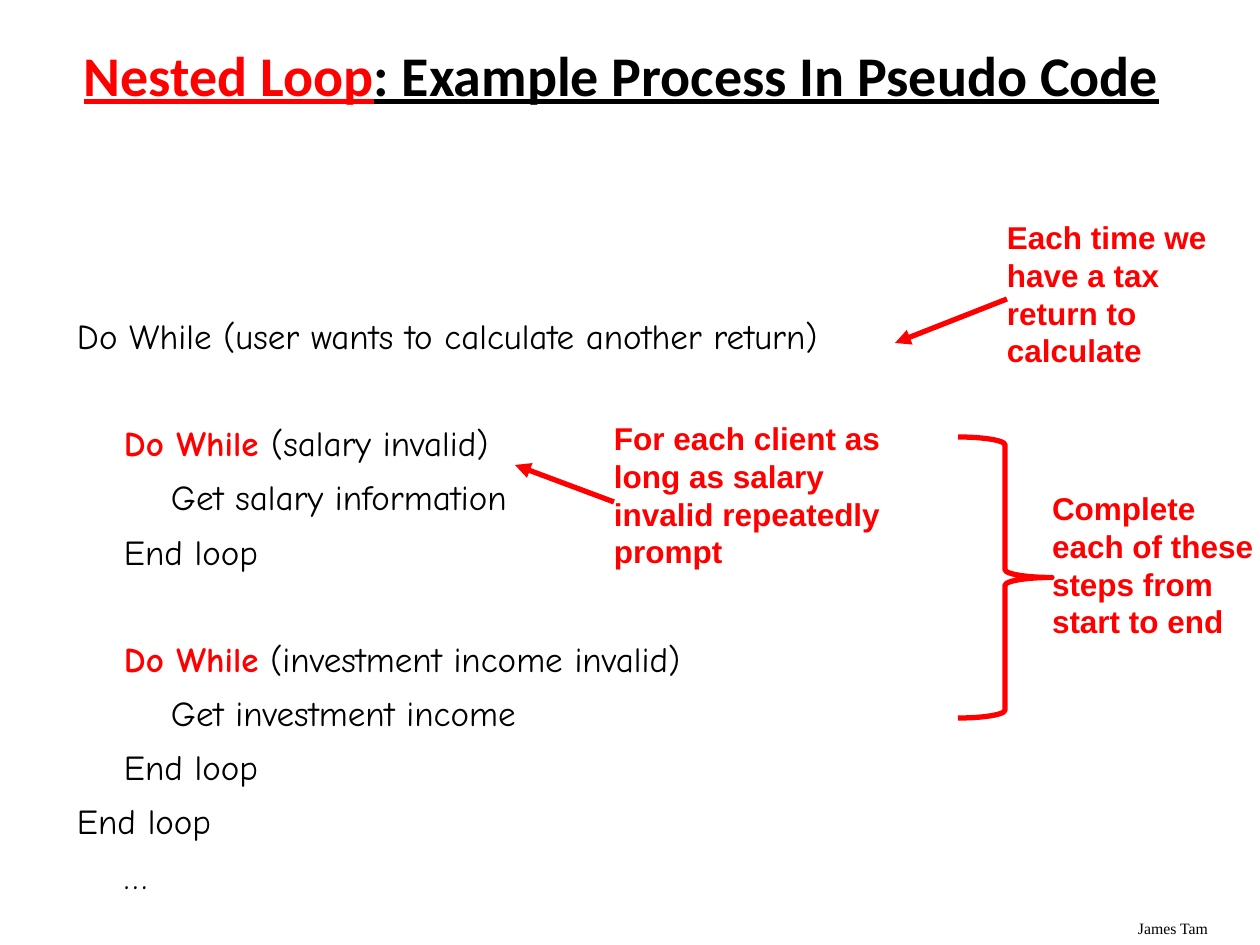
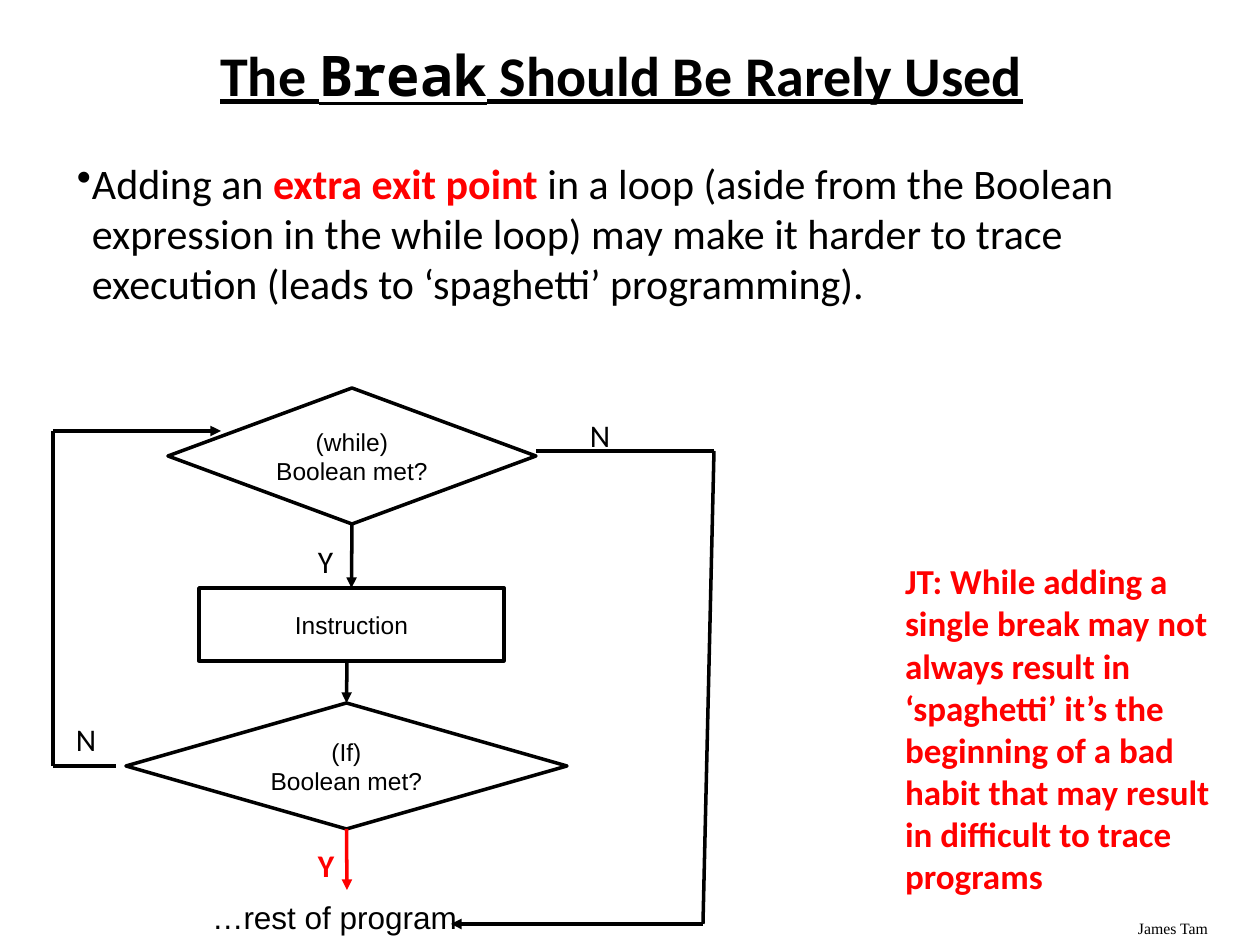
from itertools import pairwise

from pptx import Presentation
from pptx.dml.color import RGBColor
from pptx.enum.shapes import MSO_CONNECTOR as Connector, MSO_SHAPE as Shape
from pptx.enum.text import MSO_ANCHOR as Anchor, PP_ALIGN as Align
from pptx.oxml.ns import qn
from pptx.util import Pt

EMU_PER_PX = 914400 / 126
PAGE_WIDTH, PAGE_HEIGHT = 1260, 945
TITLE_ONLY = 5

BLACK = RGBColor(0x00, 0x00, 0x00)
RED = RGBColor(0xFF, 0x00, 0x00)

BODY_FONT, CODE_FONT, KEYWORD_FONT = "Calibri", "Comic Neue", "Noto Sans Mono"
LABEL_FONT, FOOTER_FONT = "Arial", "Times New Roman"

TOP, LEFT, BOTTOM = 0, 1, 2  # connection sites


def px(length):
    return round(length * EMU_PER_PX)


def write(para, spans, font, size, underline=None):
    """Fill a paragraph with spans of (text, colour, bold[, font])."""
    for text, color, bold, *own_font in spans:
        span = para.add_run()
        span.text = text
        span.font.name = own_font[0] if own_font else font
        span.font.size = Pt(size)
        span.font.color.rgb = color
        span.font.bold = bold
        span.font.underline = underline


def indent(para, margin, first=0):
    properties = para._p.get_or_add_pPr()
    properties.set("marL", str(px(margin)))
    properties.set("indent", str(px(first)))
    return properties


def set_insets(frame, left=13, right=13):
    frame.margin_left, frame.margin_right = px(left), px(right)
    frame.margin_top = frame.margin_bottom = px(6)


def add_text(page, left, top, width, height, spans, font, size, inset_left=13, inset_right=13):
    box = page.shapes.add_textbox(px(left), px(top), px(width), px(height))
    frame = box.text_frame
    frame.word_wrap = True
    set_insets(frame, inset_left, inset_right)
    write(frame.paragraphs[0], spans, font, size)
    return box


def add_line(page, start, end, color=BLACK, weight=2, arrow=False):
    line = page.shapes.add_connector(Connector.STRAIGHT, *map(px, (*start, *end)))
    line.line.color.rgb = color
    line.line.width = Pt(weight)
    properties = line.element.spPr
    if arrow:
        outline = properties.find(qn("a:ln"))
        outline.append(outline.makeelement(qn("a:tailEnd"), {"type": "triangle"}))
    properties.append(properties.makeelement(qn("a:effectLst"), {}))
    return line


def add_outline(page, kind, left, top, width, height, color=BLACK, weight=2):
    shape = page.shapes.add_shape(kind, px(left), px(top), px(width), px(height))
    shape.shadow.inherit = False
    shape.fill.background()
    shape.line.color.rgb = color
    shape.line.width = Pt(weight)
    return shape


def add_page(deck, title_spans):
    """Add a page with the shared title style and footer."""
    page = deck.slides.add_slide(deck.slide_layouts[TITLE_ONLY])
    title = page.shapes.title
    title.left, title.top, title.width, title.height = map(px, (59, 42, 1125, 72))
    frame = title.text_frame
    frame.vertical_anchor = Anchor.MIDDLE
    set_insets(frame)
    para = frame.paragraphs[0]
    para.alignment = Align.CENTER
    para.line_spacing = 0.9
    write(para, title_spans, BODY_FONT, 32, underline=True)
    add_text(page, 1125, 913, 126, 32, [("James Tam", BLACK, False)], FOOTER_FONT, 9)
    return page


# Nested loop page

def add_pseudo_code(page, left, top, width, height):
    # indent level, starts a new block, keyword, rest of the line
    lines = [
        (0, False, "", "Do While (user wants to calculate another return)"),
        (1, True, "Do While ", "(salary invalid)"),
        (2, False, "", "Get salary information"),
        (1, False, "", "End loop"),
        (1, True, "Do While", " (investment income invalid)"),
        (2, False, "", "Get investment income"),
        (1, False, "", "End loop"),
        (0, False, "", "End loop"),
        (1, False, "", "…"),
    ]
    box = add_text(page, left, top, width, height, [], CODE_FONT, 20)
    frame = box.text_frame
    for number, (level, new_block, keyword, rest) in enumerate(lines):
        para = frame.add_paragraph() if number else frame.paragraphs[0]
        indent(para, 47 * level)
        if number:
            para.space_before = Pt(37 if new_block else 7)
        spans = [(keyword, RED, True)] if keyword else []
        write(para, spans + [(rest, BLACK, False)], CODE_FONT, 20)


def add_callout(page, left, top, width, height, text):
    return add_text(page, left, top, width, height, [(text, RED, True)],
                    LABEL_FONT, 18, inset_left=0, inset_right=4)


def build_nested_loop(deck):
    page = add_page(deck, [("Nested Loop", RED, True),
                           (": Example Process In Pseudo Code", BLACK, True)])
    add_pseudo_code(page, 64, 309, 1126, 582)

    add_callout(page, 1007, 212, 214, 139, "Each time we have a tax return to calculate")
    add_line(page, (1007, 299), (895, 343), RED, 3, arrow=True)

    add_outline(page, Shape.RIGHT_BRACE, 958, 437, 94, 281, RED, 3)
    add_callout(page, 1052, 483, 208, 139, "Complete each of these steps from start to end")

    salary_note = add_callout(page, 614, 413, 290, 178,
                              "For each client as long as salary invalid repeatedly prompt")
    salary_arrow = add_line(page, (614, 502), (515, 465), RED, 3, arrow=True)
    salary_arrow.begin_connect(salary_note, LEFT)


# Break page

def add_step(page, kind, left, top, width, height, text):
    step = add_outline(page, kind, left, top, width, height)
    frame = step.text_frame
    frame.text = text
    frame.word_wrap = False
    frame.vertical_anchor = Anchor.MIDDLE
    set_insets(frame)
    for para in frame.paragraphs:
        para.alignment = Align.CENTER
        font = para.runs[0].font
        font.name, font.size, font.color.rgb = LABEL_FONT, Pt(14), BLACK
    return step


def add_route(page, points):
    """Draw a bent path whose last leg carries the arrowhead."""
    for start, end in pairwise(points):
        add_line(page, start, end, arrow=end == points[-1])


def add_flowchart(page, left, top):
    def at(x, y):
        return left + x, top + y

    # Steps
    while_test = add_step(page, Shape.DIAMOND, *at(115, 0), 368, 136, "(while)\nBoolean met?")
    instruction = add_step(page, Shape.RECTANGLE, *at(146, 200), 305, 73, "Instruction")
    if_test = add_step(page, Shape.DIAMOND, *at(73, 315), 441, 126, "(If)\nBoolean met?")

    # Downward arrows
    enter = add_line(page, at(299, 136), at(299, 200), arrow=True)
    enter.begin_connect(while_test, BOTTOM)
    enter.end_connect(instruction, TOP)
    check = add_line(page, at(294, 273), at(294, 315), arrow=True)
    check.end_connect(if_test, TOP)
    leave = add_line(page, at(294, 441), at(294, 502), RED, arrow=True)
    leave.begin_connect(if_test, BOTTOM)

    # Loop exit on the right, loop return on the left
    add_route(page, [at(483, 63), at(661, 63), at(650, 536), at(398, 536)])
    add_route(page, [at(63, 378), at(0, 378), at(0, 43), at(168, 43)])

    # Labels
    labels = [
        (252, 148, 42, "Y", BLACK, False, BODY_FONT),
        (524, 22, 73, "N", BLACK, False, BODY_FONT),
        (252, 452, 42, "Y", RED, True, BODY_FONT),
        (10, 326, 73, "N", BLACK, False, BODY_FONT),
        (146, 504, 336, "…rest of program", BLACK, False, LABEL_FONT),
    ]
    for x, y, width, text, color, bold, font in labels:
        add_text(page, *at(x, y), width, 50, [(text, color, bold)], font, 18)


def add_bullet(page, left, top, width, height, spans):
    box = add_text(page, left, top, width, height, spans, BODY_FONT, 24)
    properties = indent(box.text_frame.paragraphs[0], 15, -15)
    properties.append(properties.makeelement(qn("a:buChar"), {"char": "•"}))


def build_break(deck):
    page = add_page(deck, [("The ", BLACK, True), ("Break", BLACK, True, KEYWORD_FONT),
                           (" Should Be Rarely Used", BLACK, True)])
    add_bullet(page, 64, 151, 1126, 180, [
        ("Adding an ", BLACK, False),
        ("extra exit point ", RED, True),
        ("in a loop (aside from the Boolean expression in the while loop) may make it "
         "harder to trace execution (leads to ‘spaghetti’ programming).", BLACK, False),
    ])
    add_flowchart(page, 53, 388)
    add_text(page, 892, 554, 357, 352, [
        ("JT: While adding a single break may not always result in ‘spaghetti’ it’s the "
         "beginning of a bad habit that may result in difficult to trace programs", RED, True),
    ], BODY_FONT, 20)


def main():
    deck = Presentation()
    deck.slide_width, deck.slide_height = px(PAGE_WIDTH), px(PAGE_HEIGHT)
    build_nested_loop(deck)
    build_break(deck)
    deck.save("out.pptx")


if __name__ == "__main__":
    main()
